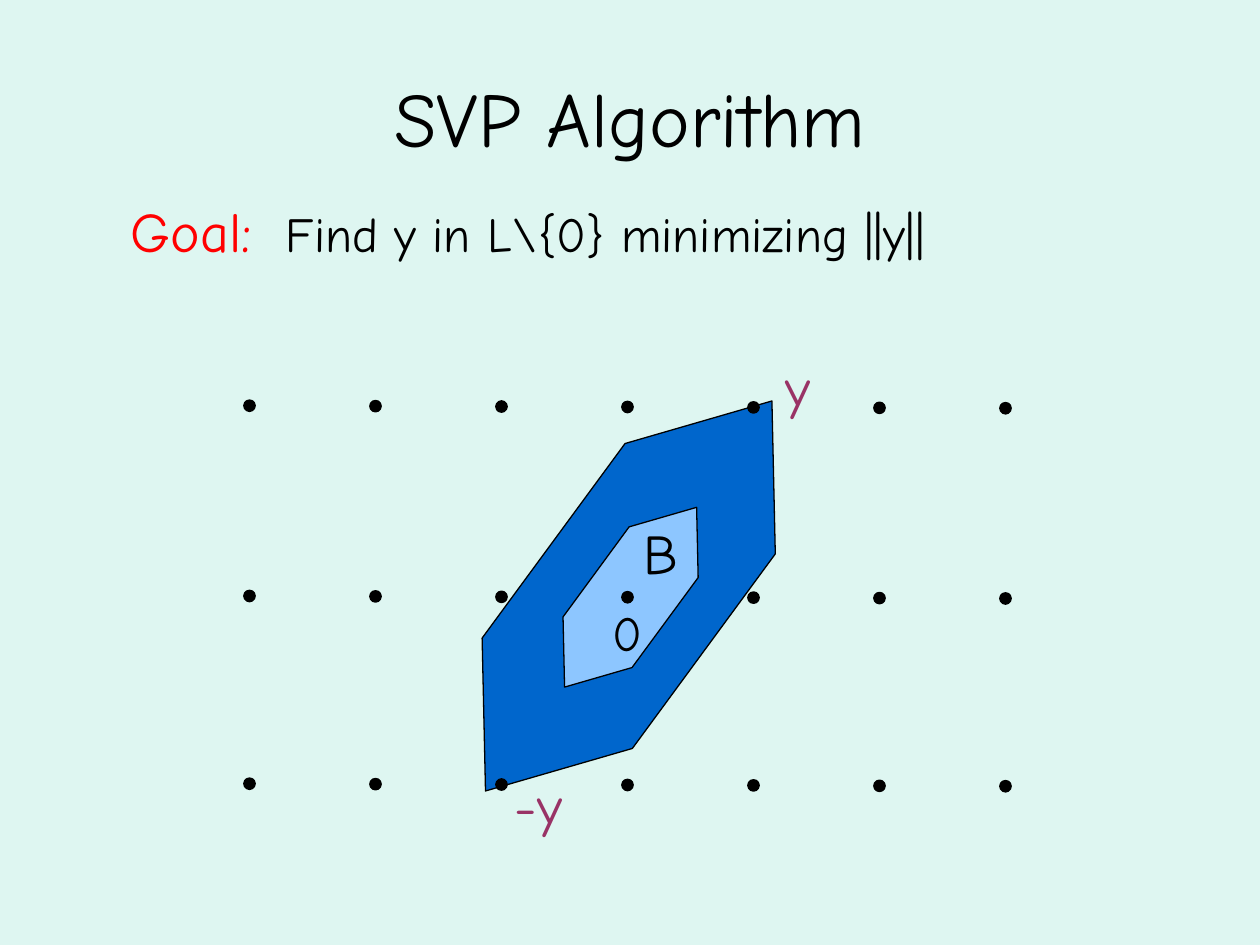
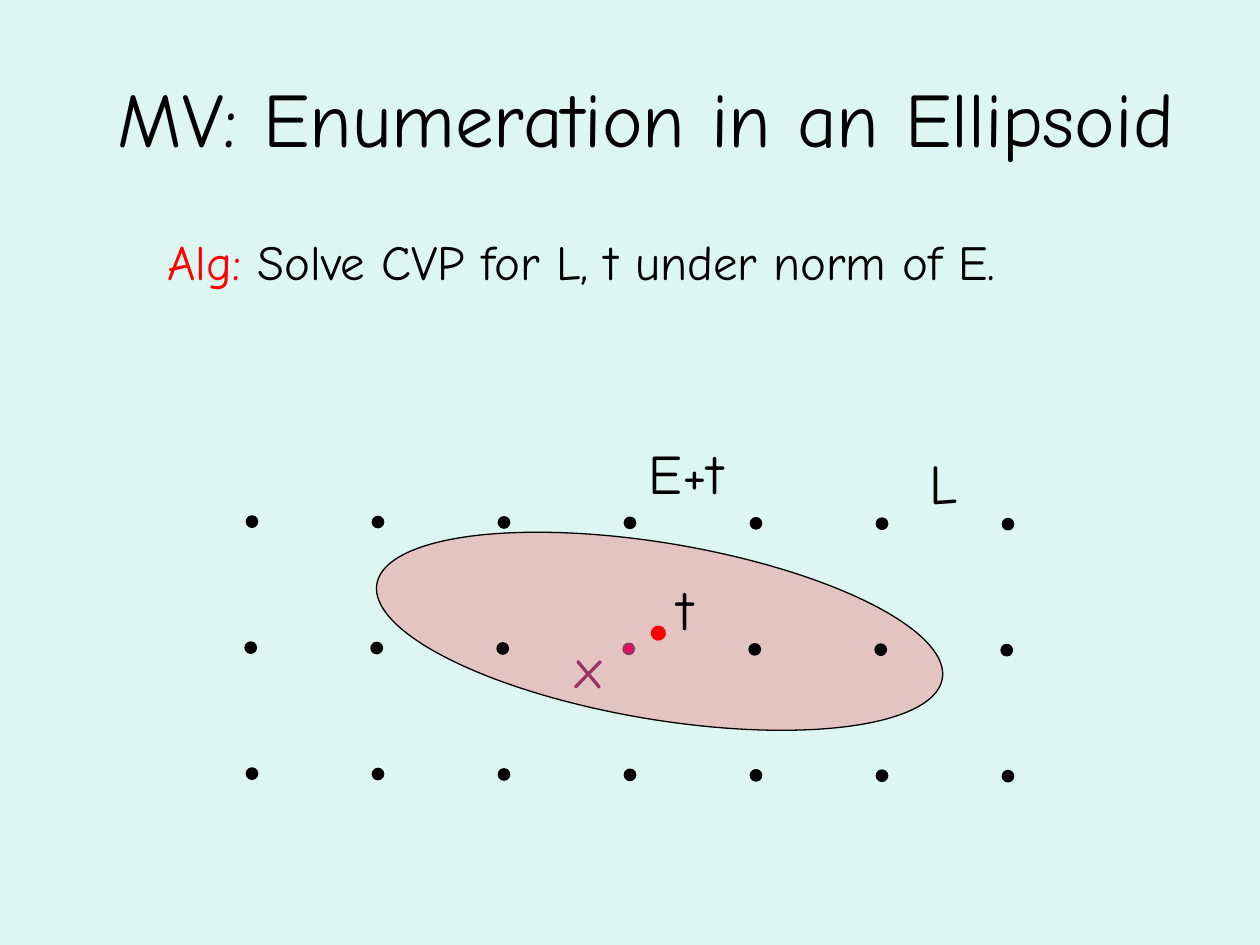
import dataclasses

import pptx
import pptx.dml.color
import pptx.enum.shapes
import pptx.enum.text
import pptx.oxml.ns
import pptx.util
from lxml import etree

Inches = pptx.util.Inches
SHAPES = pptx.enum.shapes.MSO_SHAPE
ALIGN = pptx.enum.text.PP_ALIGN
ANCHOR = pptx.enum.text.MSO_ANCHOR
AUTO_SIZE = pptx.enum.text.MSO_AUTO_SIZE


@dataclasses.dataclass(frozen=True)
class Theme:
    """Colours, font and type sizes shared by the slides."""

    font: str = "Comic Neue"
    background: str = "DEF6F1"
    ink: str = "000000"
    accent: str = "FF0000"
    vector: str = "993366"
    closest: str = "FF0066"
    outer_body: str = "0066CC"
    inner_body: str = "8DC6FF"
    title_size: int = 44
    label_size: int = 32
    body_size: int = 28
    thin_line: float = 0.75
    dot_line: float = 1.5


THEME = Theme()


def rgb(color):
    """Turn a hex string into a colour."""
    return pptx.dml.color.RGBColor.from_string(color)


def write_text(paragraph, text, *, size=THEME.body_size, color=THEME.ink):
    """Append formatted text to a paragraph."""
    run = paragraph.add_run()
    run.text = text
    run.font.name = THEME.font
    run.font.size = pptx.util.Pt(size)
    run.font.color.rgb = rgb(color)


def add_text_box(slide, box, *, align=ALIGN.LEFT, anchor=ANCHOR.TOP, wrap=True, hanging=0):
    """Add an empty text box and return its paragraph."""
    frame = slide.shapes.add_textbox(*map(Inches, box)).text_frame
    frame.word_wrap = wrap
    frame.auto_size = AUTO_SIZE.NONE if wrap else AUTO_SIZE.SHAPE_TO_FIT_TEXT
    frame.vertical_anchor = anchor
    paragraph = frame.paragraphs[0]
    paragraph.alignment = align
    if hanging:
        properties = paragraph._p.get_or_add_pPr()
        properties.set("marL", str(Inches(hanging)))
        properties.set("indent", str(-Inches(hanging)))
    return paragraph


def add_title(slide, left, width, text):
    """Add the centred slide title."""
    paragraph = add_text_box(
        slide, (left, 0.3, width, 1.25), align=ALIGN.CENTER, anchor=ANCHOR.MIDDLE
    )
    write_text(paragraph, text, size=THEME.title_size)


def add_label(slide, box, text, *, align=ALIGN.LEFT, size=THEME.label_size, color=THEME.ink):
    """Label a part of the drawing."""
    paragraph = add_text_box(slide, box, align=align, wrap=False)
    write_text(paragraph, text, size=size, color=color)


def add_figure(slide, kind, box, fill, *, line=THEME.ink, weight=THEME.thin_line,
               rotation=0, opacity=None):
    """Add a filled and outlined preset shape."""
    shape = slide.shapes.add_shape(kind, *map(Inches, box))
    shape.shadow.inherit = False
    shape.rotation = rotation
    shape.fill.solid()
    shape.fill.fore_color.rgb = rgb(fill)
    shape.line.color.rgb = rgb(line)
    shape.line.width = pptx.util.Pt(weight)
    if opacity is not None:
        color = shape.fill._xPr.find(".//" + pptx.oxml.ns.qn("a:srgbClr"))
        etree.SubElement(color, pptx.oxml.ns.qn("a:alpha")).set("val", str(opacity * 1000))
    return shape


def add_hexagon(slide, box, fill):
    """Add a tilted, stretched hexagon."""
    hexagon = add_figure(slide, SHAPES.HEXAGON, box, fill, rotation=306.3)
    hexagon.adjustments[0] = 0.65


def add_lattice(slide, row_starts, closest=None):
    """Draw rows of seven points, one inch apart, sinking slightly to the right."""
    columns, diameter, drift = 7, 0.08, 0.02
    for row, (left, top) in enumerate(row_starts):
        for column in range(columns):
            is_closest = (row, column) == closest
            add_figure(
                slide, SHAPES.OVAL,
                (left + column, top + drift * column / (columns - 1), diameter, diameter),
                THEME.closest if is_closest else THEME.ink,
                line=THEME.vector if is_closest else THEME.ink,
                weight=THEME.dot_line,
            )


def add_slide(presentation):
    """Add a blank slide with the shared background."""
    slide = presentation.slides.add_slide(presentation.slide_layouts[6])
    slide.background.fill.solid()
    slide.background.fill.fore_color.rgb = rgb(THEME.background)
    return slide


def build_shortest_vector(presentation):
    """Show the body B scaled until it reaches the shortest vector."""
    slide = add_slide(presentation)
    add_hexagon(slide, (3.07, 3.99, 3.84, 1.48), THEME.outer_body)
    add_label(slide, (3.94, 6.07, 0.62, 0.63), "-y", align=ALIGN.RIGHT, color=THEME.vector)
    add_label(slide, (6.1, 2.75, 0.43, 0.63), "y", align=ALIGN.RIGHT, color=THEME.vector)
    add_hexagon(slide, (4.12, 4.4, 1.77, 0.68), THEME.inner_body)
    add_label(slide, (4.76, 4.73, 0.44, 0.57), "0", size=THEME.body_size)
    add_title(slide, 0.5, 9, "SVP Algorithm")
    goal = add_text_box(slide, (0.94, 1.51, 8.05, 0.73), hanging=1.23)
    write_text(goal, "Goal:\t", size=THEME.label_size, color=THEME.accent)
    write_text(goal, "Find y in L\\{0} minimizing ||y||")
    add_lattice(slide, [(1.94, 3.18), (1.94, 4.69), (1.94, 6.18)])
    add_label(slide, (5.01, 4.07, 0.48, 0.63), "B")


def build_ellipsoid(presentation):
    """Show the lattice points inside an ellipsoid around t."""
    slide = add_slide(presentation)
    tilt = 9.5
    add_figure(slide, SHAPES.OVAL, (2.96, 4.31, 4.55, 1.4), THEME.accent,
               rotation=tilt, opacity=20)
    add_title(slide, 0.58, 9.1, "MV: Enumeration in an Ellipsoid")
    algorithm = add_text_box(slide, (1.23, 1.79, 7.46, 0.74))
    write_text(algorithm, "Alg:", color=THEME.accent)
    write_text(algorithm, " Solve CVP for L, t under norm of E.")
    add_lattice(slide, [(1.96, 4.1), (1.95, 5.1), (1.96, 6.1)], closest=(1, 3))
    add_label(slide, (5.05, 3.43, 1.11, 0.63), "E+t")
    add_figure(slide, SHAPES.OVAL, (5.17, 4.97, 0.11, 0.11), THEME.accent,
               line=THEME.accent, rotation=tilt)
    add_label(slide, (7.28, 3.51, 0.47, 0.63), "L")
    add_label(slide, (4.47, 4.97, 0.55, 0.63), "x", color=THEME.vector)
    add_label(slide, (5.28, 4.51, 0.55, 0.63), "t")


def main():
    """Build and save the presentation."""
    presentation = pptx.Presentation()
    presentation.slide_width = Inches(10)
    presentation.slide_height = Inches(7.5)
    build_shortest_vector(presentation)
    build_ellipsoid(presentation)
    presentation.save("out.pptx")


if __name__ == "__main__":
    main()
